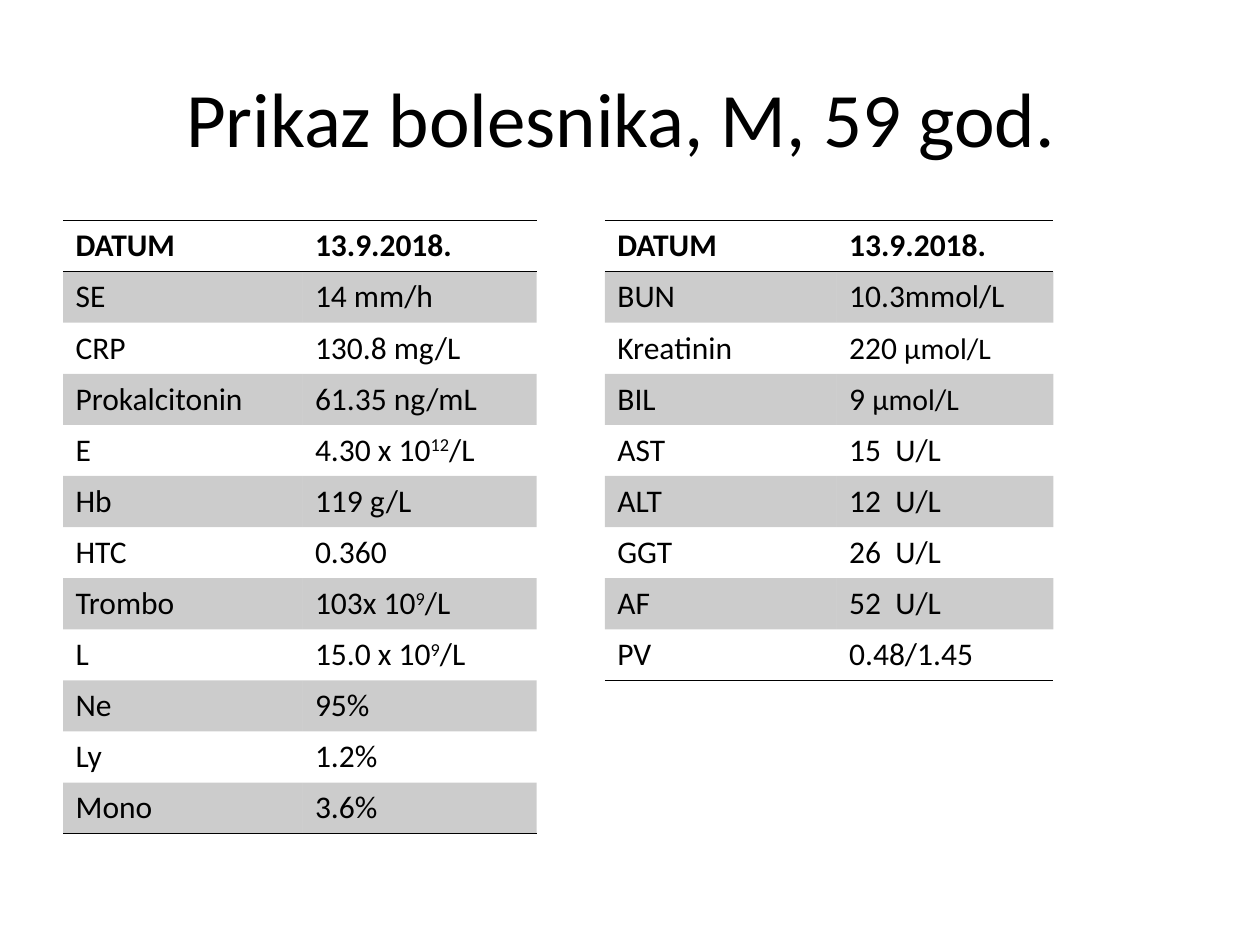
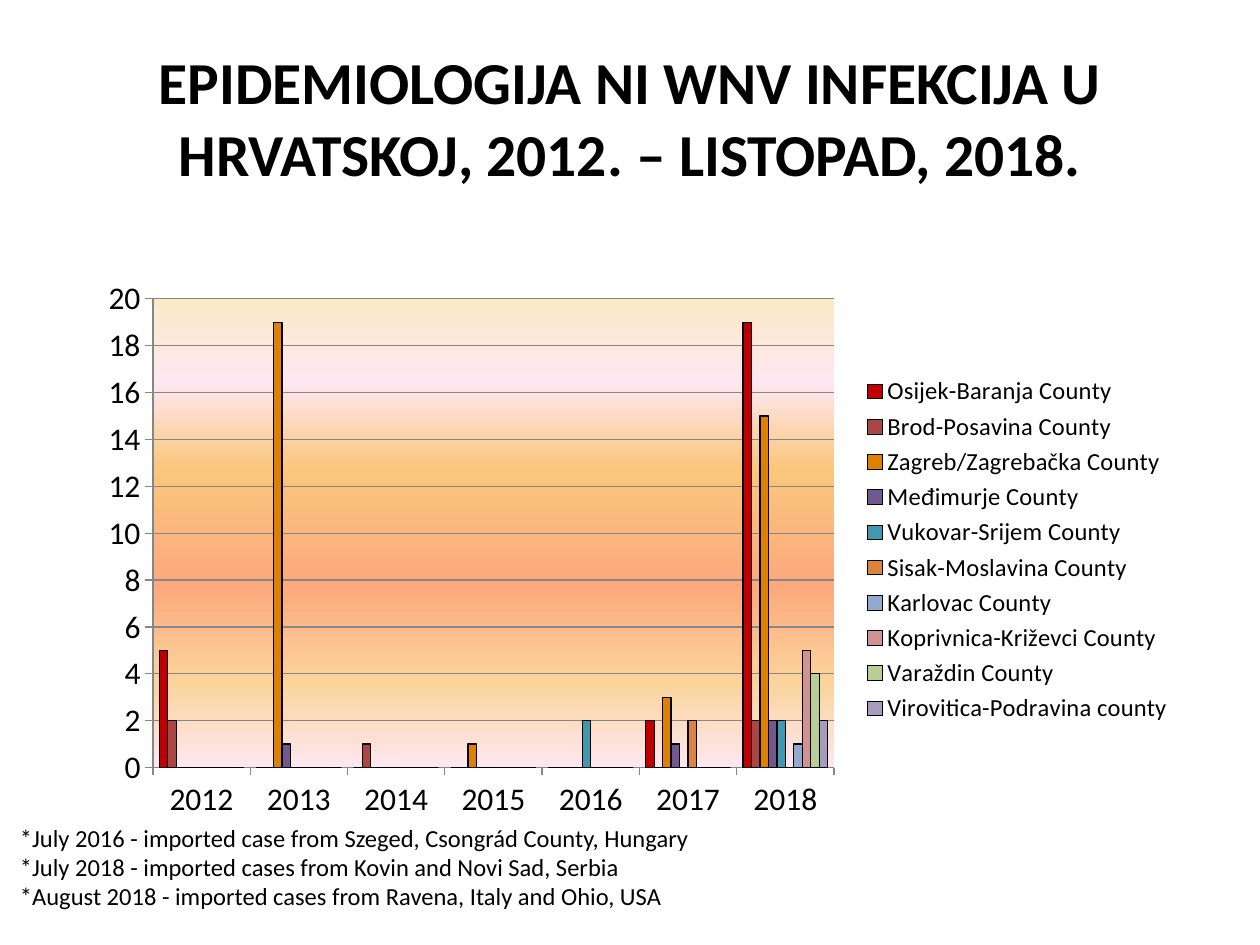
from lxml import etree
from pptx import Presentation
from pptx.chart.data import CategoryChartData
from pptx.dml.color import RGBColor
from pptx.enum.chart import XL_CHART_TYPE, XL_LEGEND_POSITION, XL_TICK_MARK
from pptx.enum.text import MSO_ANCHOR, PP_ALIGN
from pptx.oxml import parse_xml
from pptx.oxml.ns import nsdecls, qn
from pptx.util import Inches, Pt

CLUSTERED = XL_CHART_TYPE.COLUMN_CLUSTERED
LEGEND_RIGHT = XL_LEGEND_POSITION.RIGHT
TICK_OUTSIDE, TICK_NONE = XL_TICK_MARK.OUTSIDE, XL_TICK_MARK.NONE
MIDDLE = MSO_ANCHOR.MIDDLE
CENTER = PP_ALIGN.CENTER

FONT = "Calibri"
COLORS = {"text": "000000", "line": "000000", "band": "000000", "grid": "868686"}
TITLE_ONLY = 5
NO_STYLE_NO_GRID = "{2D5ABB26-0587-4C30-8999-92F81FD0307C}"


# Laboratory results
def power(number, exponent):
    return [(number, {}), (exponent, {"raised": True}), ("/L", {})]


def micromoles(number):
    return [(number + " ", {}), ("μmol/L", {"size": 17})]


HEADER = ("DATUM", "13.9.2018.")
BLOOD_ROWS = [
    HEADER,
    ("SE", "14 mm/h"),
    ("CRP", "130.8 mg/L"),
    ("Prokalcitonin", "61.35 ng/mL"),
    ("E", power("4.30 x 10", "12")),
    ("Hb", "119 g/L"),
    ("HTC", "0.360"),
    ("Trombo", power("103x 10", "9")),
    ("L", power("15.0 x 10", "9")),
    ("Ne", "95%"),
    ("Ly", "1.2%"),
    ("Mono", "3.6%"),
]
BIOCHEMISTRY_ROWS = [
    HEADER,
    ("BUN", "10.3mmol/L"),
    ("Kreatinin", micromoles("220")),
    ("BIL", micromoles("9")),
    ("AST", "15  U/L"),
    ("ALT", "12  U/L"),
    ("GGT", "26  U/L"),
    ("AF", "52  U/L"),
    ("PV", "0.48/1.45"),
]

# Cases by county and year: name, colour, outline width, values
YEARS = [str(year) for year in range(2012, 2019)]
COUNTIES = [
    ("Osijek-Baranja County", "C00000", 0.75, (5, 0, 0, 0, 0, 2, 19)),
    ("Brod-Posavina County", "AA4643", 0.75, (2, 0, 1, 0, 0, 0, 2)),
    ("Zagreb/Zagrebačka County", "DD8003", 0.75, (0, 19, 0, 1, 0, 3, 15)),
    ("Međimurje County", "71588F", 0.75, (0, 1, 0, 0, 0, 1, 2)),
    ("Vukovar-Srijem County", "4198AF", 0.75, (0, 0, 0, 0, 2, 0, 2)),
    ("Sisak-Moslavina County", "DB843D", 0.75, (0, 0, 0, 0, 0, 2, 0)),
    ("Karlovac County", "93A9CF", 0.75, (0, 0, 0, 0, 0, 0, 1)),
    ("Koprivnica-Križevci County", "D19392", 0.75, (0, 0, 0, 0, 0, 0, 5)),
    ("Varaždin County", "B9CD96", 0.75, (0, 0, 0, 0, 0, 0, 4)),
    ("Virovitica-Podravina county", "A99BBD", 0.25, (0, 0, 0, 0, 0, 0, 2)),
]
SUNSET_STOPS = [(0, "FBEAC7"), (18, "FEE7F2"), (36, "FAC77D"),
                (61, "FBA97D"), (82, "FBD49C"), (100, "FEE7F2")]
PLOT_LAYOUT = {"x": 0.06, "y": 0.05, "w": 0.62, "h": 0.84}
IMPORTED_CASES = [
    "*July 2016 - imported case from Szeged, Csongrád County, Hungary",
    "*July 2018 - imported cases from Kovin and Novi Sad, Serbia",
    "*August 2018 - imported cases from Ravena, Italy and Ohio, USA",
]


# Text
def style_font(font, size, bold=False):
    font.name = FONT
    font.size = Pt(size)
    font.bold = bold
    font.color.rgb = RGBColor.from_string(COLORS["text"])


def add_text(para, text, size=18, bold=False, raised=False):
    span = para.add_run()
    span.text = text
    style_font(span.font, size, bold)
    if raised:
        span._r.get_or_add_rPr().set("baseline", "30000")


def add_titled_slide(deck, text, **text_format):
    slide = deck.slides.add_slide(deck.slide_layouts[TITLE_ONLY])
    title = slide.shapes.title
    title.left, title.top = Inches(0.5), Inches(0.3)
    title.width, title.height = Inches(9), Inches(1.25)
    title.text_frame.vertical_anchor = MIDDLE
    para = title.text_frame.paragraphs[0]
    para.alignment = CENTER
    add_text(para, text, **text_format)
    return slide


def add_notes_box(slide, lines, left, top, width, height):
    box = slide.shapes.add_textbox(Inches(left), Inches(top), Inches(width), Inches(height))
    frame = box.text_frame
    frame.word_wrap = True
    for index, line in enumerate(lines):
        para = frame.add_paragraph() if index else frame.paragraphs[0]
        add_text(para, line, size=14)


# Tables
def fill_band(cell):
    cell.fill.solid()
    cell.fill.fore_color.rgb = RGBColor.from_string(COLORS["band"])
    color = cell._tc.tcPr.find(".//" + qn("a:srgbClr"))
    etree.SubElement(color, qn("a:alpha"), val="20000")


def add_border(cell, side):
    border = parse_xml(
        f'<a:{side} {nsdecls("a")} w="{Pt(1)}"><a:solidFill>'
        f'<a:srgbClr val="{COLORS["line"]}"/></a:solidFill></a:{side}>')
    properties = cell._tc.get_or_add_tcPr()
    # Borders come before the fill
    position = len(properties.findall(qn("a:lnT")))
    properties.insert(position, border)


def add_results_table(slide, rows, left, height, column_widths):
    frame = slide.shapes.add_table(len(rows), len(column_widths), Inches(left), Inches(1.75),
                                   Inches(sum(column_widths)), Inches(height))
    table = frame.table
    table._tbl.tblPr.find(qn("a:tableStyleId")).text = NO_STYLE_NO_GRID
    for column, width in zip(table.columns, column_widths):
        column.width = Inches(width)
    for row_index, row in enumerate(rows):
        is_header = row_index == 0
        for column_index, content in enumerate(row):
            cell = table.cell(row_index, column_index)
            spans = [(content, {})] if isinstance(content, str) else content
            for text, text_format in spans:
                add_text(cell.text_frame.paragraphs[0], text, bold=is_header, **text_format)
            if row_index % 2:
                fill_band(cell)
            else:
                cell.fill.background()
            if is_header:
                add_border(cell, "lnT")
            if is_header or row_index == len(rows) - 1:
                add_border(cell, "lnB")


# Chart
def style_plot_area(chart):
    plot_area = chart._chartSpace.chart.plotArea
    for old_layout in plot_area.findall(qn("c:layout")):
        plot_area.remove(old_layout)
    sizes = "".join(f'<c:{key} val="{value}"/>' for key, value in PLOT_LAYOUT.items())
    plot_area.insert(0, parse_xml(
        f'<c:layout {nsdecls("c")}><c:manualLayout><c:layoutTarget val="inner"/>'
        f'<c:xMode val="edge"/><c:yMode val="edge"/>{sizes}</c:manualLayout></c:layout>'))
    stops = "".join(f'<a:gs pos="{percent * 1000}"><a:srgbClr val="{color}"/></a:gs>'
                    for percent, color in SUNSET_STOPS)
    plot_area.append(parse_xml(
        f'<c:spPr {nsdecls("c", "a")}><a:gradFill><a:gsLst>{stops}</a:gsLst>'
        f'<a:lin ang="5400000" scaled="0"/></a:gradFill></c:spPr>'))


def style_axes(chart):
    grid_color = RGBColor.from_string(COLORS["grid"])
    value_axis = chart.value_axis
    value_axis.minimum_scale, value_axis.maximum_scale = 0, 20
    value_axis.major_unit = 2
    value_axis.has_major_gridlines = True
    value_axis.major_gridlines.format.line.color.rgb = grid_color
    for axis in (chart.category_axis, value_axis):
        axis.major_tick_mark = TICK_OUTSIDE
        axis.minor_tick_mark = TICK_NONE
        axis.format.line.color.rgb = grid_color
        style_font(axis.tick_labels.font, 18)


def add_county_chart(slide, left, top, width, height):
    data = CategoryChartData()
    data.categories = YEARS
    for name, _, _, values in COUNTIES:
        data.add_series(name, values)
    chart = slide.shapes.add_chart(CLUSTERED, Inches(left), Inches(top),
                                   Inches(width), Inches(height), data).chart
    chart.has_title = False
    style_font(chart.font, 18)
    chart.has_legend = True
    chart.legend.position = LEGEND_RIGHT
    chart.legend.include_in_layout = False
    style_font(chart.legend.font, 14)
    style_axes(chart)
    style_plot_area(chart)

    plot = chart.plots[0]
    plot.gap_width, plot.overlap = 150, 0
    plot.vary_by_categories = False
    for series, (_, color, outline, _) in zip(plot.series, COUNTIES):
        series.invert_if_negative = False
        series.format.fill.solid()
        series.format.fill.fore_color.rgb = RGBColor.from_string(color)
        series.format.line.color.rgb = RGBColor.from_string(COLORS["line"])
        series.format.line.width = Pt(outline)


def main():
    deck = Presentation()
    deck.slide_width, deck.slide_height = Inches(10), Inches(7.5)

    # Patient's laboratory results
    slide = add_titled_slide(deck, "Prikaz bolesnika, M, 59 god. ", size=44)
    add_results_table(slide, BLOOD_ROWS, left=0.5, height=4.86, column_widths=(1.9, 1.86))
    add_results_table(slide, BIOCHEMISTRY_ROWS, left=4.8, height=3.64,
                      column_widths=(1.84, 1.72))

    # Cases by county
    slide = add_titled_slide(
        deck, "EPIDEMIOLOGIJA NI WNV INFEKCIJA U HRVATSKOJ, 2012. – LISTOPAD, 2018.",
        size=34, bold=True)
    add_county_chart(slide, left=0.69, top=2.15, width=8.72, height=4.43)
    add_notes_box(slide, IMPORTED_CASES, left=0.06, top=6.48, width=7.31, height=0.8)

    deck.save("out.pptx")


if __name__ == "__main__":
    main()
